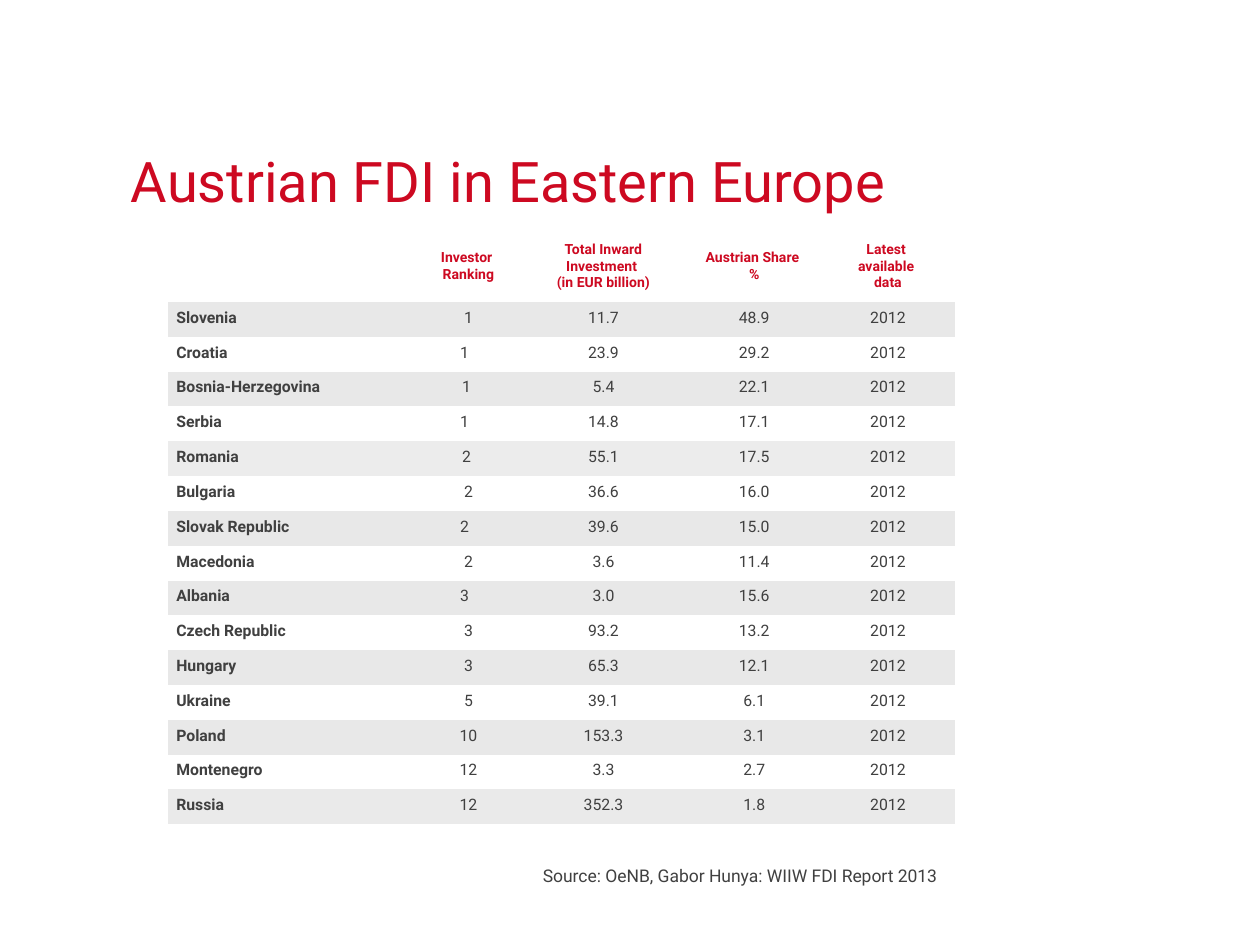
"""Build a slide with a table of Austrian direct investment in Eastern Europe."""
from typing import Any, NamedTuple

from pptx import Presentation
from pptx.dml.color import RGBColor
from pptx.enum.text import MSO_ANCHOR as Anchor, MSO_AUTO_SIZE as AutoSize, PP_ALIGN as Align
from pptx.util import Emu, Pt

EMU_PER_PX = 3048
PLAIN_STYLE = "{2D5ABB26-0587-4C30-8999-92F81FD0307C}"
COLORS = {
    "red": "CD0921",
    "text": "404040",
    "gray": "E8E8E8",
    "light": "ECECEC",
    "soft": "EAEAEA",
    "white": "FFFFFF",
}


class Country(NamedTuple):
    name: str
    rank: str
    investment: str
    share: str
    shift: int = 0
    year: str = "2012"


class Caption(NamedTuple):
    text: str
    left: int
    top: int
    width: int
    height: int
    size: int
    color: str
    frame: dict[str, Any]


CAPTIONS = [
    Caption("Austrian FDI in Eastern Europe", 282, 333, 2700, 375, 32, "red",
            {"word_wrap": True}),
    Caption("Source: OeNB, Gabor Hunya: WIIW FDI Report 2013", 1263, 2046, 1023, 81, 10, "text",
            {"word_wrap": False, "auto_size": AutoSize.SHAPE_TO_FIT_TEXT}),
]
HEADINGS = [
    [],
    ["Investor ", "Ranking"],
    ["Total Inward Investment ", "(in EUR billion)"],
    ["Austrian Share ", "%"],
    ["Latest ", "available ", "data"],
]
COUNTRIES = [
    Country("Slovenia", "1", "11.7", "48.9"),
    Country("Croatia", "1", "23.9", "29.2", 18),
    Country("Bosnia-Herzegovina", "1", "5.4", "22.1", 9),
    Country("Serbia", "1", "14.8", "17.1", 18),
    Country("Romania", "2", "55.1", "17.5", 9),
    Country("Bulgaria", "2", "36.6", "16.0"),
    Country("Slovak Republic", "2", "39.6", "15.0", 18),
    Country("Macedonia", "2", "3.6", "11.4"),
    Country("Albania", "3", "3.0", "15.6", 18),
    Country("Czech Republic", "3", "93.2", "13.2"),
    Country("Hungary", "3", "65.3", "12.1"),
    Country("Ukraine", "5", "39.1", "6.1"),
    Country("Poland", "10", "153.3", "3.1"),
    Country("Montenegro", "12", "3.3", "2.7"),
    Country("Russia", "12", "352.3", "1.8"),
]
SPECIAL_FILLS = {"Croatia": None, "Romania": "light", "Russia": "soft"}
LEFT, TOP = 399, 549
COLUMN_WIDTHS = [595, 243, 400, 318, 319]
HEADER_HEIGHT, ROW_HEIGHT = 170, 83
MARGIN_X, MARGIN_Y = 21, 11


def px(length: int) -> Emu:
    """Turn a length in px into EMU."""
    return Emu(length * EMU_PER_PX)


def apply(target: Any, values: dict[str, Any]) -> None:
    """Set every named attribute on the target."""
    for name, value in values.items():
        setattr(target, name, value)


def write(frame: Any, lines: list[str], size: int, color: str, bold: bool = False,
          layout: dict[str, Any] | None = None) -> None:
    """Write each line as one paragraph of a text frame."""
    for index, line in enumerate(lines):
        para = frame.add_paragraph() if index else frame.paragraphs[0]
        apply(para, layout or {})
        span = para.add_run()
        span.text = line
        apply(span.font, {"name": "Roboto", "size": Pt(size), "bold": bold})
        span.font.color.rgb = RGBColor.from_string(COLORS[color])


def add_caption(page: Any, caption: Caption) -> None:
    """Add one free text box."""
    place = (px(length) for length in caption[1:5])
    frame = page.shapes.add_textbox(*place).text_frame
    apply(frame, caption.frame)
    write(frame, [caption.text], caption.size, caption.color)


def style_cell(cell: Any, fill: str | None, shift: int = 0) -> None:
    """Set the margins, anchor and fill of a cell."""
    apply(cell, {
        "margin_left": px(MARGIN_X),
        "margin_right": px(MARGIN_X + shift),
        "margin_top": px(MARGIN_Y),
        "margin_bottom": px(MARGIN_Y),
        "vertical_anchor": Anchor.MIDDLE,
    })
    if fill is None:
        cell.fill.background()
    else:
        cell.fill.solid()
        cell.fill.fore_color.rgb = RGBColor.from_string(COLORS[fill])


def add_investment_table(page: Any) -> None:
    """Add the table with its heading row and one row for each country."""
    height = HEADER_HEIGHT + ROW_HEIGHT * len(COUNTRIES)
    table = page.shapes.add_table(
        len(COUNTRIES) + 1, len(COLUMN_WIDTHS),
        px(LEFT), px(TOP), px(sum(COLUMN_WIDTHS)), px(height)).table
    apply(table, {"first_row": False, "horz_banding": False})
    table._tbl.tblPr[0].text = PLAIN_STYLE
    for column, width in zip(table.columns, COLUMN_WIDTHS):
        column.width = px(width)
    for index, row in enumerate(table.rows):
        row.height = px(ROW_HEIGHT if index else HEADER_HEIGHT)

    for column, lines in enumerate(HEADINGS):
        cell = table.cell(0, column)
        style_cell(cell, None)
        write(cell.text_frame, lines, 8, "red", True, {"alignment": Align.CENTER})

    for index, country in enumerate(COUNTRIES, start=1):
        fill = SPECIAL_FILLS.get(country.name, "gray" if index % 2 else "white")
        values = [country.name, country.rank, country.investment, country.share, country.year]
        for column, value in enumerate(values):
            cell = table.cell(index, column)
            style_cell(cell, fill, country.shift if column == 1 else 0)
            layout = {"alignment": Align.CENTER if column else Align.LEFT, "line_spacing": 0.7}
            write(cell.text_frame, [value], 9, "text", column == 0, layout)


def main() -> None:
    """Build and save the deck."""
    deck = Presentation()
    apply(deck, {"slide_width": px(3000), "slide_height": px(2250)})
    page = deck.slides.add_slide(deck.slide_layouts[6])
    title, source = CAPTIONS
    add_caption(page, title)
    add_investment_table(page)
    add_caption(page, source)
    deck.save("out.pptx")


if __name__ == "__main__":
    main()
